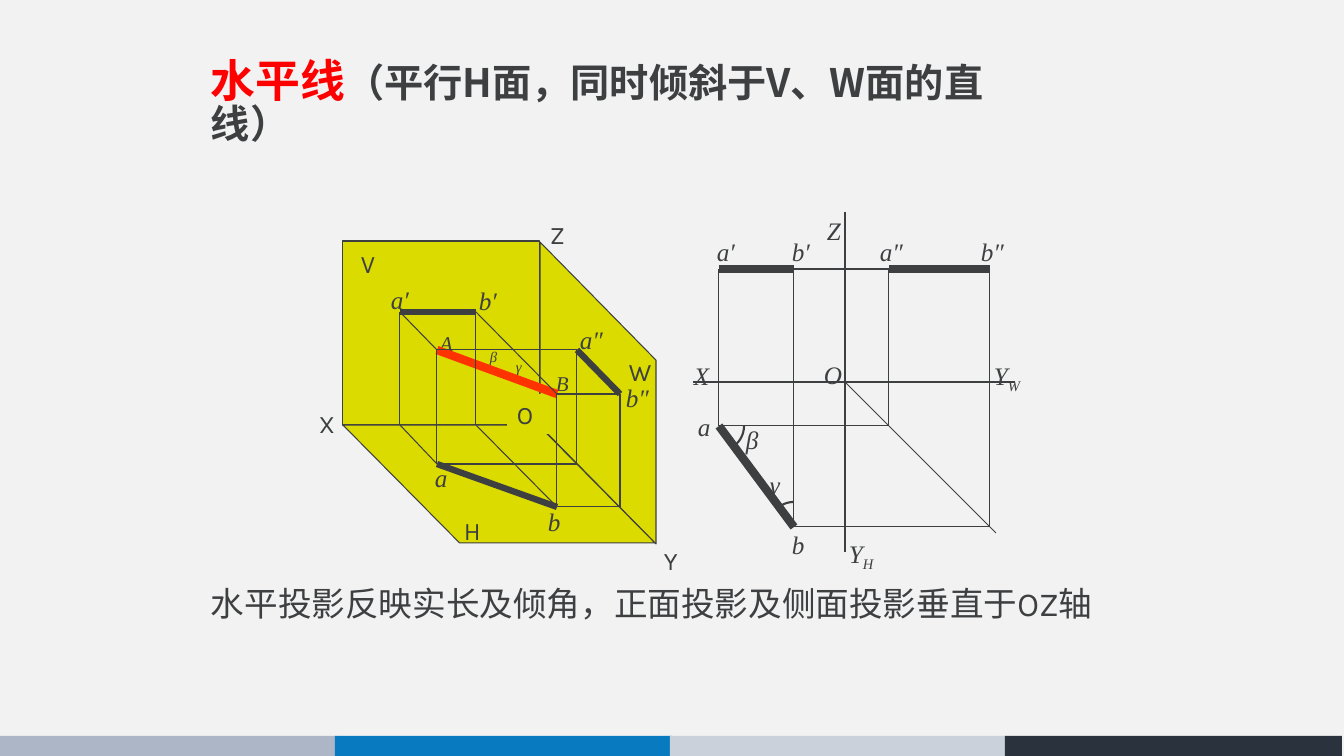
from math import cos, radians, sin

from pptx import Presentation
from pptx.dml.color import RGBColor
from pptx.enum.shapes import MSO_CONNECTOR, MSO_SHAPE
from pptx.oxml.ns import qn
from pptx.util import Pt
from lxml.etree import SubElement

PX = 914400 / 100.8
THEME = {
    "ink": "3D3F41", "red": "FF0000", "true_line": "FF3300", "plane": "DBDB00",
    "page": "F2F2F2", "bars": ["ADB6C7", "087AC0", "CBD1DB", "2A323E"],
    "sans": "Karla", "cjk": "Noto Sans CJK SC", "serif": "Times New Roman",
    "title": 32, "subtitle": 28, "note": 24, "label": 18, "point": 15, "angle": 10.5,
    "thin": 0.75, "axis": 1.5, "projection": 4.5, "heavy": 6,
}
INK = THEME["ink"]


def emu(*lengths):
    return [round(n * PX) for n in lengths]


def rgb(name):
    return RGBColor.from_string(name)


prs = Presentation()
prs.slide_width, prs.slide_height = emu(1344, 756)
slide = prs.slides.add_slide(prs.slide_layouts[6])
shapes = slide.shapes
slide.background.fill.solid()
slide.background.fill.fore_color.rgb = rgb(THEME["page"])

# Footer bars
for i, color in enumerate(THEME["bars"]):
    sp = shapes.add_shape(MSO_SHAPE.RECTANGLE, *emu(i * 335, 736, 337, 21))
    sp.shadow.inherit = False
    sp.fill.solid()
    sp.fill.fore_color.rgb = rgb(color)
    sp.line.fill.background()

# Planes W, V and H
planes = [
    (MSO_SHAPE.PARALLELOGRAM, (447, 335, 302, 116), 1.018, 270, False),
    (MSO_SHAPE.RECTANGLE, (343, 241, 197, 184), None, 0, False),
    (MSO_SHAPE.PARALLELOGRAM, (343, 425, 312, 118), 0.989, 0, True),
]
for kind, box, slant, turn, flipped in planes:
    sp = shapes.add_shape(kind, *emu(*box))
    sp.shadow.inherit = False
    sp.fill.solid()
    sp.fill.fore_color.rgb = rgb(THEME["plane"])
    sp.line.color.rgb = rgb(INK)
    sp.line.width = Pt(THEME["thin"])
    sp.rotation = turn
    if slant:
        sp.adjustments[0] = slant
    if flipped:
        sp._element.spPr.find(qn("a:xfrm")).set("flipH", "1")

# Labels: text, left, top, width, filled; a second letter is a subscript
label_groups = [
    (THEME["serif"], THEME["point"], [("A", 430, 326, 50, True), ("B", 546, 366, 50, True)]),
    (THEME["sans"], THEME["label"], [
        ("V", 351, 243, 44, True), ("W", 619, 351, 44, False), ("H", 454, 510, 44, False),
        ("X", 309, 403, 44, False), ("Y", 654, 540, 44, False), ("Z", 540, 214, 44, False),
        ("O", 507, 394, 44, True)]),
    (THEME["serif"], THEME["label"], [
        ("a", 425, 457, 50, False), ("a′", 381, 279, 50, False), ("b′", 469, 280, 50, False),
        ("a″", 570, 319, 50, False), ("b", 538, 501, 50, False), ("b″", 616, 377, 50, False),
        ("X", 684, 355, 44, False), ("a′", 707, 231, 50, False), ("b′", 782, 231, 50, False),
        ("a″", 870, 231, 50, False), ("b″", 971, 231, 50, False), ("b", 782, 524, 50, False),
        ("a", 688, 406, 50, False), ("O", 814, 354, 44, False), ("Z", 817, 210, 44, False),
        ("YH", 839, 533, 56, False), ("YW", 984, 355, 56, False),
        ("β", 736, 419, 46, False), ("γ", 760, 464, 37, False)]),
    (THEME["serif"], THEME["angle"], [("β", 480, 343, 34, False), ("γ", 506, 353, 34, False)]),
]
for font, size, labels in label_groups:
    for text, x, y, w, filled in labels:
        sp = shapes.add_textbox(*emu(x, y, w, 40))
        if filled:
            sp.fill.solid()
            sp.fill.fore_color.rgb = rgb(THEME["plane"])
        tf = sp.text_frame
        tf.word_wrap = True
        p = tf.paragraphs[0]
        parts = list(text) if text in ("YH", "YW") else [text]
        for i, part in enumerate(parts):
            r = p.add_run()
            r.text = part
            r.font.name, r.font.size = font, Pt(size)
            r.font.italic = font == THEME["serif"]
            r.font.color.rgb = rgb(INK)
            if i:
                r.font._element.set("baseline", "-25000")

# Points of the pictorial view, then of the three projections
A, B = (437, 350), (557, 394)
a, b = (437, 464), (557, 507)
a_v, b_v, a_x, b_x = (400, 312), (476, 312), (400, 425), (476, 425)
a_w, b_w, a_y, b_y = (577, 350), (620, 394), (577, 464), (620, 507)
pa, pb = (719, 426), (794, 527)
pa_v, pb_v, pa_w, pb_w = (719, 269), (794, 269), (889, 269), (990, 269)
pa_y, pb_y = (889, 426), (990, 527)
origin = (845, 382)

line_groups = [
    (THEME["true_line"], THEME["heavy"], [(A, B)]),
    (INK, THEME["thin"], [
        (b, B), (B, b_w), (a, A), (a, a_x), (a_x, a_v), (A, a_v), (b, b_y), (b_y, b_w),
        (A, a_w), (a, a_y), (B, b_v), (b, b_x), (b_x, b_v), (a_y, a_w),
        (pa, pa_v), (pb, pb_v), (origin, (996, 533)), (pb_v, pa_w), (pb, pb_y),
        (pb_y, pb_w), (pa, pa_y), (pa_y, pa_w)]),
    (INK, THEME["projection"], [(a, b), (b_w, a_w), (a_v, b_v)]),
    (INK, THEME["axis"], [((1015, 382), (693, 382)), ((845, 552), (845, 212))]),
    (INK, THEME["heavy"], [(pa_v, pb_v), (pa, pb), (pa_w, pb_w)]),
]
for color, width, lines in line_groups:
    for start, end in lines:
        line = shapes.add_connector(MSO_CONNECTOR.STRAIGHT, *emu(*start, *end))
        line.line.color.rgb = rgb(color)
        line.line.width = Pt(width)
        SubElement(line._element.spPr, qn("a:effectLst"))

# Angle arcs around a and b
for (cx, cy), first, last in [(pa, 0, 53), (pb, 234, 270)]:
    angles = [radians(first + (last - first) * i / 12) for i in range(13)]
    arc = [emu(cx + 25 * cos(t), cy + 25 * sin(t)) for t in angles]
    builder = shapes.build_freeform(*arc[0])
    builder.add_line_segments(arc[1:], close=False)
    sp = builder.convert_to_shape()
    sp.shadow.inherit = False
    sp.fill.background()
    sp.line.color.rgb = rgb(INK)
    sp.line.width = Pt(THEME["axis"])

# Title and closing note
texts = [
    ((201, 56, 846, 64), 0.85, [
        ("水平线", THEME["sans"], THEME["title"], THEME["red"], True),
        ("（平行H面，同时倾斜于V、W面的直线）", THEME["cjk"], THEME["subtitle"], INK, True)]),
    ((201, 583, 930, 50), 0.9, [
        ("水平投影反映实长及倾角，正面投影及侧面投影垂直于OZ轴", THEME["sans"], THEME["note"], INK, False)]),
]
for box, spacing, runs in texts:
    tf = shapes.add_textbox(*emu(*box)).text_frame
    tf.word_wrap = True
    p = tf.paragraphs[0]
    p.line_spacing = spacing
    for text, font, size, color, bold in runs:
        r = p.add_run()
        r.text = text
        r.font.name, r.font.size, r.font.bold = font, Pt(size), bold
        r.font.color.rgb = rgb(color)
        SubElement(r.font._element, qn("a:ea")).set("typeface", THEME["cjk"])

prs.save("out.pptx")
